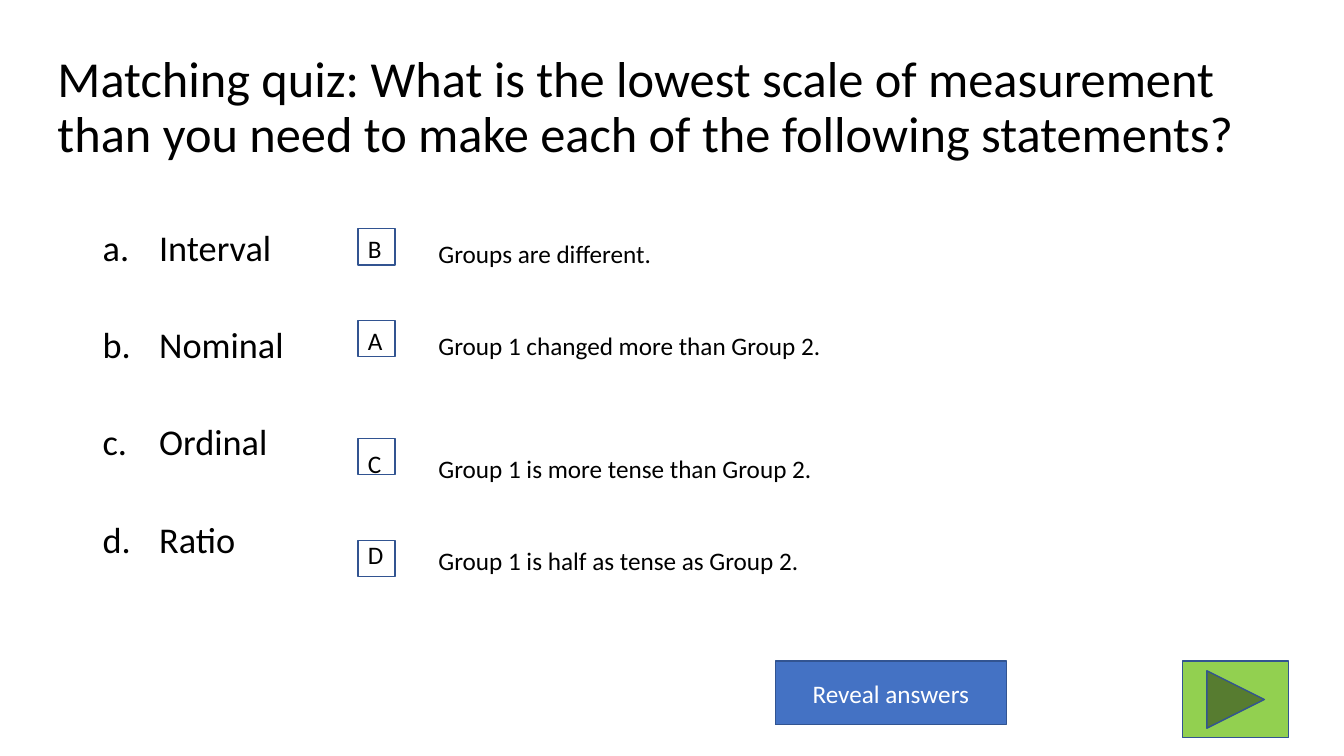
from lxml import etree
from pptx import Presentation
from pptx.dml.color import RGBColor
from pptx.enum import shapes, text
from pptx.oxml import ns
from pptx.util import Inches, Pt

QUESTION = ("Matching quiz: What is the lowest scale of measurement than you need "
            "to make each of the following statements?")
SCALES = ["Interval", "Nominal", "Ordinal", "Ratio"]
STATEMENTS = [
    "Groups are different.",
    "Group 1 changed more than Group 2.",
    "Group 1 is more tense than Group 2.",
    "Group 1 is half as tense as Group 2.",
]
ANSWERS = ["B", "A", "C", "D"]
ANSWER_GAPS = [0, 43.94, 65.92, 43.94]
SCALE_GAPS = [10, 44.5, 44.5, 44.5]
SQUARE_TOPS = [0, 0.91, 2.08, 3.09]


def color(value):
    return RGBColor.from_string(value)


def write(paragraph, words, size, ink="000000"):
    run = paragraph.add_run()
    run.text = words
    run.font.name = "Calibri"
    run.font.size = Pt(size)
    run.font.color.rgb = color(ink)


def add_title(slide, box):
    title = slide.shapes.title
    title.left, title.top, title.width, title.height = map(Inches, box)
    frame = title.text_frame
    frame.word_wrap = True
    frame.auto_size = text.MSO_AUTO_SIZE.NONE
    frame.vertical_anchor = text.MSO_ANCHOR.MIDDLE
    heading = frame.paragraphs[0]
    heading.alignment = text.PP_ALIGN.LEFT
    heading.line_spacing = 0.9
    write(heading, QUESTION, 36)


def add_column(slide, box, entries, gaps, size, wrap=True):
    frame = slide.shapes.add_textbox(*map(Inches, box)).text_frame
    frame.word_wrap = wrap
    for index, (entry, gap) in enumerate(zip(entries, gaps)):
        paragraph = frame.add_paragraph() if index else frame.paragraphs[0]
        paragraph.space_before = Pt(gap)
        write(paragraph, entry, size)
    return frame.paragraphs


def add_scales(slide, box):
    for scale in add_column(slide, box, SCALES, SCALE_GAPS, 25.9):
        scale.line_spacing = 0.8
        properties = scale._p.get_or_add_pPr()
        properties.set("marL", str(Inches(0.56)))
        properties.set("indent", str(-Inches(0.56)))
        numbering = etree.SubElement(properties, ns.qn("a:buAutoNum"))
        numbering.set("type", "alphaLcPeriod")


def add_outlined(slide, kind, box, fill=None):
    shape = slide.shapes.add_shape(kind, *map(Inches, box))
    shape.shadow.inherit = False
    if fill:
        shape.fill.solid()
        shape.fill.fore_color.rgb = color(fill)
    else:
        shape.fill.background()
    shape.line.color.rgb = color("325491")
    shape.line.width = Pt(1)
    return shape


def add_squares(slide, left, top):
    for offset in SQUARE_TOPS:
        add_outlined(slide, shapes.MSO_SHAPE.RECTANGLE,
                     (left, top + offset, 0.37, 0.36))


def add_buttons(slide, left, top):
    reveal = add_outlined(slide, shapes.MSO_SHAPE.ACTION_BUTTON_CUSTOM,
                          (left, top, 2.29, 0.63), "4472C4")
    reveal.text_frame.vertical_anchor = text.MSO_ANCHOR.MIDDLE
    label = reveal.text_frame.paragraphs[0]
    label.alignment = text.PP_ALIGN.CENTER
    write(label, "Reveal answers", 18, "FFFFFF")
    add_outlined(slide, shapes.MSO_SHAPE.ACTION_BUTTON_FORWARD_OR_NEXT,
                 (left + 4.04, top, 1.05, 0.76), "92D050")


def main():
    deck = Presentation()
    deck.slide_width, deck.slide_height = Inches(13.33), Inches(7.5)
    slide = deck.slides.add_slide(deck.slide_layouts[5])
    add_title(slide, (0.47, 0.31, 11.95, 1.54))
    add_scales(slide, (0.92, 2.27, 2.43, 3.53))
    add_column(slide, (4.25, 2.32, 4.04, 3.43), STATEMENTS, ANSWER_GAPS, 18, wrap=False)
    add_column(slide, (3.55, 2.27, 0.51, 3.43), ANSWERS, ANSWER_GAPS, 18)
    add_buttons(slide, 7.69, 6.56)
    add_squares(slide, 3.55, 2.27)
    deck.save("out.pptx")


if __name__ == "__main__":
    main()
